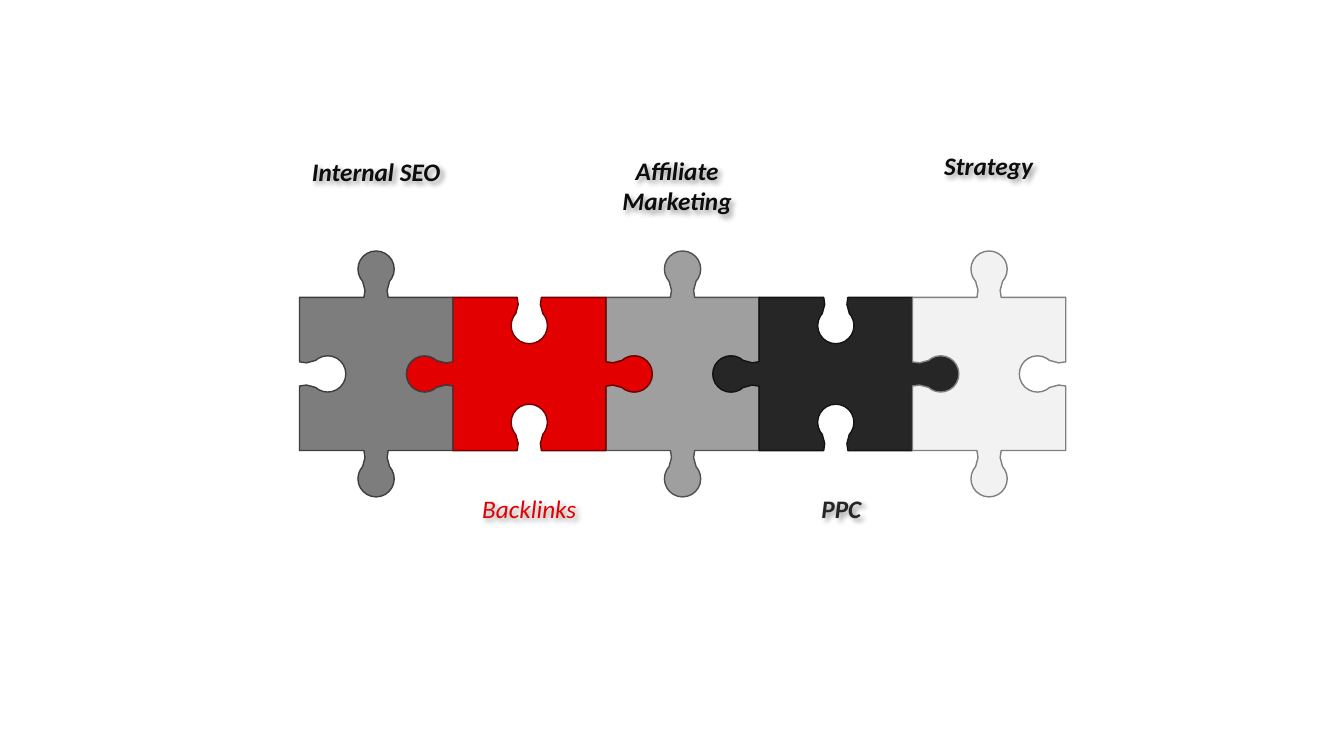
import math

import pptx
import pptx.dml.color
import pptx.enum.text
import pptx.oxml
import pptx.util

Inches = pptx.util.Inches
RGBColor = pptx.dml.color.RGBColor

INK = RGBColor(0x0D, 0x0D, 0x0D)
RED = RGBColor(0xE2, 0x00, 0x00)
DARK_RED = RGBColor(0x71, 0x00, 0x00)
CHARCOAL = RGBColor(0x26, 0x26, 0x26)
BLACK = RGBColor(0x13, 0x13, 0x13)
GREY = RGBColor(0x7D, 0x7D, 0x7D)
DARK_GREY = RGBColor(0x3E, 0x3E, 0x3E)
MID_GREY = RGBColor(0x9F, 0x9F, 0x9F)
MID_GREY_LINE = RGBColor(0x50, 0x50, 0x50)
PALE = RGBColor(0xF2, 0xF2, 0xF2)
PALE_LINE = RGBColor(0x80, 0x80, 0x80)

SIDE = 1.52
ROW_LEFT, ROW_TOP = 2.97, 2.95
KNOB_RADIUS, KNOB_CENTER = 0.18, 0.28
ARC_START, HALF_SWEEP = 138, 132
KNOB_X = KNOB_RADIUS * math.cos(math.radians(ARC_START))
KNOB_FOOT = KNOB_CENTER - KNOB_RADIUS * math.sin(math.radians(ARC_START))
NECK = [(-0.12, 0), (-0.11, 0.07), (KNOB_X, KNOB_FOOT)]

# One side: distance along it from its middle, height of the knob
PROFILE = (
    [(-SIDE / 2, 0)] + NECK + [(0, KNOB_CENTER + KNOB_RADIUS)]
    + [(-t, h) for t, h in reversed(NECK)]
)
KNOB_TIP = 4

# column in the row, fill, outline; from back to front
PIECES = [
    (2, MID_GREY, MID_GREY_LINE),
    (3, CHARCOAL, BLACK),
    (1, RED, DARK_RED),
    (0, GREY, DARK_GREY),
    (4, PALE, PALE_LINE),
]

# text, left, top, width, height, colour, bold
LABELS = [
    ("Internal SEO", 2.82, 1.5, 1.82, 0.4, INK, True),
    ("Affiliate Marketing", 5.91, 1.49, 1.61, 0.71, INK, True),
    ("PPC", 7.54, 4.84, 1.61, 0.4, CHARCOAL, True),
    ("Strategy", 9, 1.44, 1.61, 0.4, INK, True),
    ("Backlinks", 4.23, 4.84, 2.04, 0.4, RED, False),
]

NAMESPACE = 'xmlns:a="http://schemas.openxmlformats.org/drawingml/2006/main"'
TEXT_SHADOW = (
    f'<a:effectLst {NAMESPACE}>'
    '<a:outerShdw blurRad="50800" dist="38100" dir="2700000" algn="tl" rotWithShape="0">'
    '<a:srgbClr val="000000"><a:alpha val="40000"/></a:srgbClr>'
    '</a:outerShdw></a:effectLst>'
)


def knob_sign(column, side):
    """1 for a knob, -1 for a socket; sides run clockwise from the top."""
    return 1 if (column + side) % 2 == 0 else -1


def piece_outline(column):
    cx = ROW_LEFT + (column + 0.5) * SIDE
    cy = ROW_TOP + SIDE / 2
    points = []
    for side, (dx, dy) in enumerate([(1, 0), (0, 1), (-1, 0), (0, -1)]):
        for t, h in PROFILE:
            out = SIDE / 2 + knob_sign(column, side) * h
            points.append((Inches(cx + dx * t + dy * out), Inches(cy + dy * t - dx * out)))
    return points


def round_knobs(sp, column):
    """Turn the two segments that meet at each knob's tip into arcs."""
    lines = sp._element.xpath(".//a:lnTo")
    radius = Inches(KNOB_RADIUS)
    for side in range(4):
        sign = knob_sign(column, side)
        for half in range(2):
            start = (sign * (ARC_START + half * HALF_SWEEP) + 90 * side) % 360
            arc = pptx.oxml.parse_xml(
                f'<a:arcTo {NAMESPACE} wR="{radius}" hR="{radius}" '
                f'stAng="{start * 60000}" swAng="{sign * HALF_SWEEP * 60000}"/>'
            )
            line = lines[side * len(PROFILE) + KNOB_TIP + half - 1]
            line.getparent().replace(line, arc)


def add_piece(s, column, fill, line):
    points = piece_outline(column)
    builder = s.shapes.build_freeform(*points[0])
    builder.add_line_segments(points[1:], close=True)
    sp = builder.convert_to_shape()
    round_knobs(sp, column)
    sp.shadow.inherit = False
    sp.fill.solid()
    sp.fill.fore_color.rgb = fill
    sp.line.color.rgb = line
    sp.line.width = pptx.util.Pt(1)


def add_label(s, text, left, top, width, height, color, bold):
    sp = s.shapes.add_textbox(Inches(left), Inches(top), Inches(width), Inches(height))
    sp._element.spPr.append(pptx.oxml.parse_xml(TEXT_SHADOW))
    tf = sp.text_frame
    tf.word_wrap = True
    p = tf.paragraphs[0]
    p.alignment = pptx.enum.text.PP_ALIGN.CENTER
    r = p.add_run()
    r.text = text
    font = {"name": "Calibri", "size": pptx.util.Pt(18), "bold": bold, "italic": True}
    for name, value in font.items():
        setattr(r.font, name, value)
    r.font.color.rgb = color


def main():
    prs = pptx.Presentation()
    prs.slide_width, prs.slide_height = Inches(13.33), Inches(7.5)
    s = prs.slides.add_slide(prs.slide_layouts[6])
    for piece in PIECES:
        add_piece(s, *piece)
    for label in LABELS:
        add_label(s, *label)
    prs.save("out.pptx")


if __name__ == "__main__":
    main()
